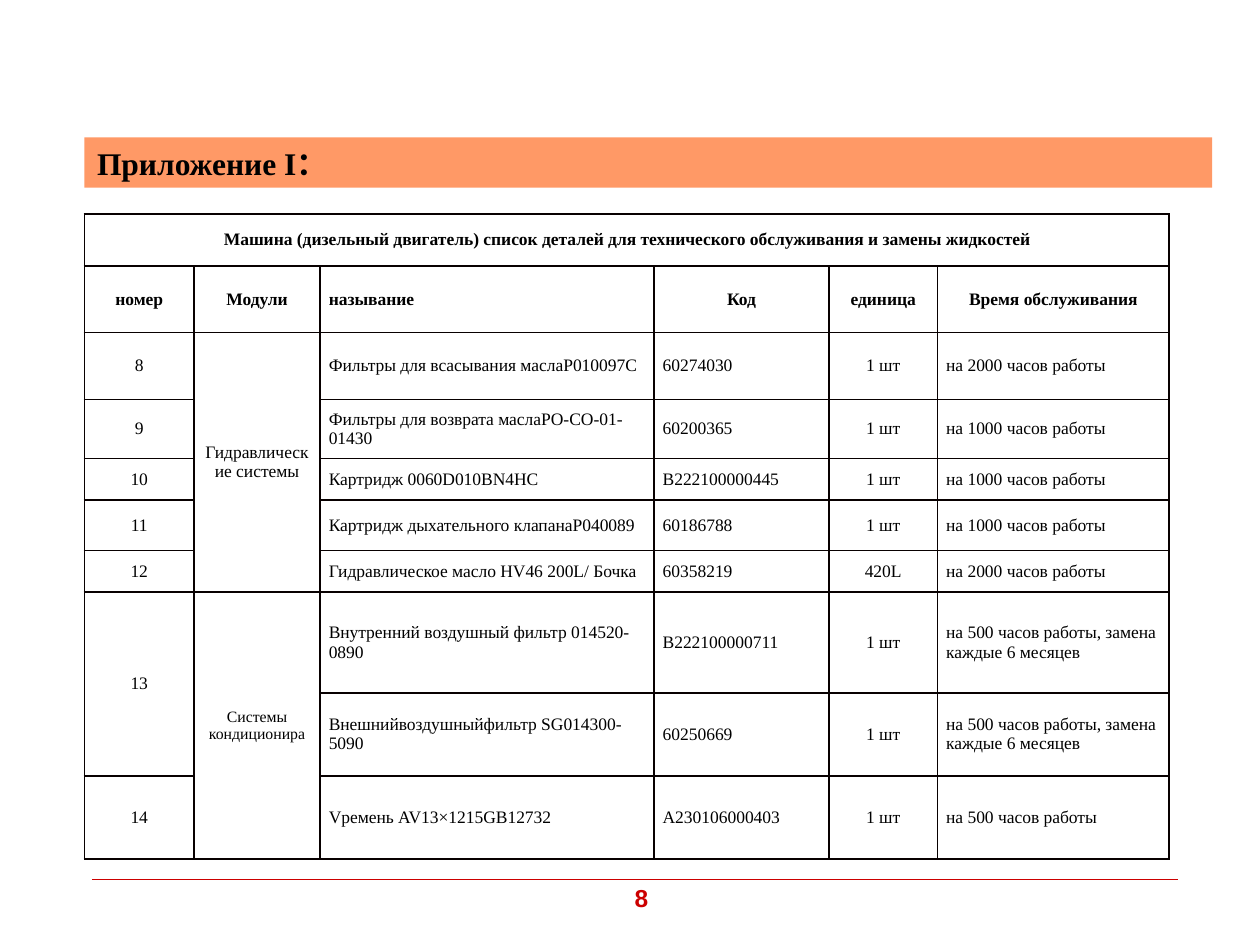
from lxml.etree import SubElement
from pptx import Presentation
from pptx.dml.color import RGBColor
from pptx.enum.shapes import MSO_CONNECTOR
from pptx.enum.text import MSO_ANCHOR, MSO_AUTO_SIZE, PP_ALIGN
from pptx.oxml.ns import qn
from pptx.util import Inches, Pt

SERIF = "Times New Roman"
BLACK = "000000"
RED = "CC0000"
BANNER = "FF9966"
BORDER = "080000"

COLUMN_WIDTHS = [0.87, 1, 2.65, 1.39, 0.86, 1.84]
ROW_HEIGHTS = [0.41, 0.53, 0.53, 0.47, 0.33, 0.4, 0.33, 0.8, 0.66, 0.66]
CENTERED_COLUMNS = {0, 1, 4}
HEADER_LEFT_COLUMN = 2
MERGES = [((0, 0), (0, 5)), ((2, 1), (6, 1)), ((7, 0), (8, 0)), ((7, 1), (9, 1))]

CAPTION = "Машина (дизельный двигатель) список деталей для технического обслуживания и замены жидкостей"
HEADERS = ["номер", "Модули", "называние", "Код", "единица", "Время обслуживания"]
HYDRAULICS = "Гидравлические системы"
CONDITIONING = "Системы кондиционира"
HOURS_500 = "на 500 часов работы"
HOURS_1000 = "на 1000 часов работы"
HOURS_2000 = "на 2000 часов работы"
HALF_YEAR = HOURS_500 + ", замена каждые 6 месяцев"
PARTS = [
    ["8", HYDRAULICS, "Фильтры для всасывания маслаP010097C", "60274030", "1 шт", HOURS_2000],
    ["9", "", "Фильтры для возврата маслаPO-CO-01-01430", "60200365", "1 шт", HOURS_1000],
    ["10", "", "Картридж 0060D010BN4HC", "B222100000445", "1 шт", HOURS_1000],
    ["11", "", "Картридж дыхательного клапанаP040089", "60186788", "1 шт", HOURS_1000],
    ["12", "", "Гидравлическое масло HV46 200L/ Бочка", "60358219", "420L", HOURS_2000],
    ["13", CONDITIONING, "Внутренний воздушный фильтр 014520-0890", "B222100000711", "1 шт", HALF_YEAR],
    ["", "", "Внешнийвоздушныйфильтр SG014300-5090", "60250669", "1 шт", HALF_YEAR],
    ["14", "", "Vремень AV13×1215GB12732", "A230106000403", "1 шт", HOURS_500],
]


def color(value):
    return RGBColor.from_string(value)


def place(shape, left, top, width, height):
    shape.left, shape.top = Inches(left), Inches(top)
    shape.width, shape.height = Inches(width), Inches(height)


def write(frame, text, size, font_name=SERIF, font_color=BLACK, bold=False, align=PP_ALIGN.LEFT):
    frame.text = text
    paragraph = frame.paragraphs[0]
    paragraph.alignment = align
    for run in paragraph.runs:
        run.font.name = font_name
        run.font.size = Pt(size)
        run.font.bold = bold
        run.font.color.rgb = color(font_color)


def add_banner_title(slide):
    title = slide.shapes.title
    place(title, 0.67, 1.09, 8.95, 0.4)
    title.fill.solid()
    title.fill.fore_color.rgb = color(BANNER)
    title.text_frame.auto_size = MSO_AUTO_SIZE.NONE
    title.text_frame.vertical_anchor = MSO_ANCHOR.MIDDLE
    write(title.text_frame, "Приложение I：", 18, bold=True)


def add_footer(slide):
    rule = slide.shapes.add_connector(
        MSO_CONNECTOR.STRAIGHT, Inches(0.73), Inches(6.98), Inches(9.35), Inches(6.98))
    rule.line.color.rgb = color(RED)
    rule.line.width = Pt(0.25)
    SubElement(rule._element.spPr, qn("a:effectLst"))

    page_number = slide.shapes.add_textbox(Inches(4.84), Inches(6.96), Inches(0.5), Inches(0.33))
    frame = page_number.text_frame
    frame.word_wrap = True
    frame.vertical_anchor = MSO_ANCHOR.MIDDLE
    write(frame, "8", 14, "Arial", RED, True, PP_ALIGN.CENTER)


def outline_cell(cell):
    properties = cell._tc.get_or_add_tcPr()
    for side in ("lnL", "lnR", "lnT", "lnB"):
        edge = SubElement(properties, qn(f"a:{side}"), w=str(Pt(1)))
        fill = SubElement(edge, qn("a:solidFill"))
        SubElement(fill, qn("a:srgbClr"), val=BORDER)


def cell_alignment(row, column):
    if row < 2:
        centered = row == 0 or column != HEADER_LEFT_COLUMN
    else:
        centered = column in CENTERED_COLUMNS
    return PP_ALIGN.CENTER if centered else PP_ALIGN.LEFT


def format_cell(cell, text, row, column):
    cell.margin_left = cell.margin_right = Inches(0.07)
    cell.margin_top = cell.margin_bottom = 0
    cell.vertical_anchor = MSO_ANCHOR.MIDDLE
    outline_cell(cell)
    cell.fill.background()
    size = 9 if text == CONDITIONING else 10
    write(cell.text_frame, text, size, bold=row < 2, align=cell_alignment(row, column))


def add_parts_table(slide):
    rows = [[CAPTION] + [""] * (len(HEADERS) - 1), HEADERS] + PARTS
    frame = slide.shapes.add_table(
        len(rows), len(HEADERS), Inches(0.67), Inches(1.7),
        Inches(sum(COLUMN_WIDTHS)), Inches(sum(ROW_HEIGHTS)))
    table = frame.table
    table.first_row = table.horz_banding = False
    for column, width in zip(table.columns, COLUMN_WIDTHS):
        column.width = Inches(width)
    for row, height in zip(table.rows, ROW_HEIGHTS):
        row.height = Inches(height)
    for row, texts in enumerate(rows):
        for column, text in enumerate(texts):
            format_cell(table.cell(row, column), text, row, column)
    for first, last in MERGES:
        table.cell(*first).merge(table.cell(*last))


def main():
    presentation = Presentation()
    presentation.slide_width = Inches(10)
    presentation.slide_height = Inches(7.5)
    slide = presentation.slides.add_slide(presentation.slide_layouts[5])
    add_footer(slide)
    add_banner_title(slide)
    add_parts_table(slide)
    presentation.save("out.pptx")


if __name__ == "__main__":
    main()
